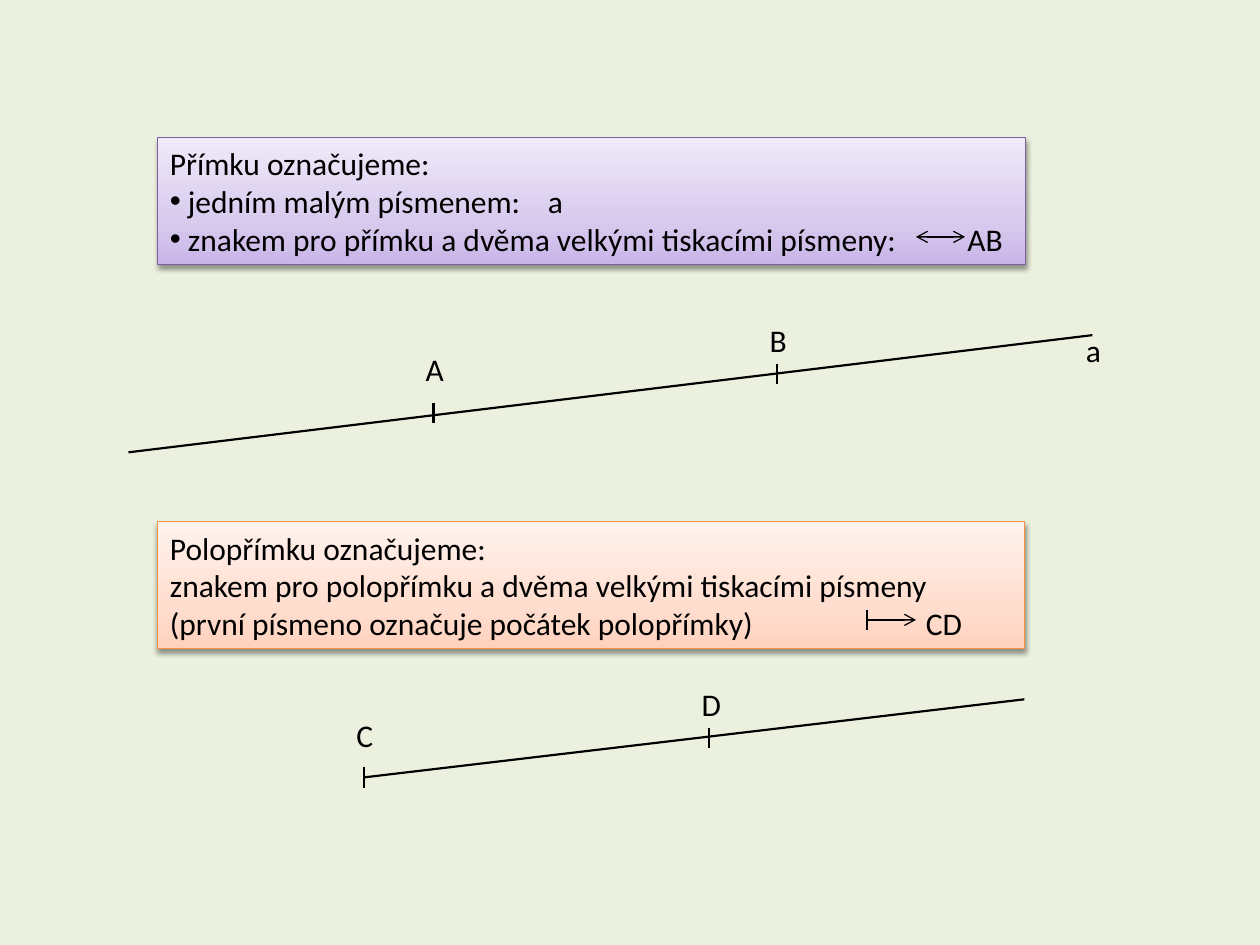
from copy import deepcopy

from pptx import Presentation
from pptx.dml.color import RGBColor
from pptx.enum.shapes import MSO_CONNECTOR, MSO_SHAPE
from pptx.enum.text import MSO_ANCHOR, PP_ALIGN
from pptx.oxml.ns import qn
from pptx.util import Inches, Pt
from lxml import etree

STRAIGHT = MSO_CONNECTOR.STRAIGHT
RECTANGLE = MSO_SHAPE.RECTANGLE
MIDDLE = MSO_ANCHOR.MIDDLE
LEFT = PP_ALIGN.LEFT

BACKGROUND = RGBColor(0xEB, 0xF1, 0xDE)
BLACK = RGBColor(0, 0, 0)
PURPLE_LINE = RGBColor(0x7D, 0x60, 0xA0)
PURPLE_FILL = (RGBColor(0xC9, 0xB5, 0xE8), RGBColor(0xD8, 0xCB, 0xEE), RGBColor(0xF0, 0xEA, 0xF9))
ORANGE_LINE = RGBColor(0xF6, 0x92, 0x40)
ORANGE_FILL = (RGBColor(0xFF, 0xD2, 0xBD), RGBColor(0xFF, 0xDE, 0xD0), RGBColor(0xFF, 0xF2, 0xED))
STOP_POSITIONS = (0, 0.35, 1)

FONT_FORMAT = {"name": "Calibri", "size": Pt(18)}
TICK_HEIGHT = 0.16
LABEL_SIZE = (0.39, 0.4)


def add_xml(parent, tag, **values):
    return etree.SubElement(parent, qn(tag), {key: str(value) for key, value in values.items()})


def write_text(para, text):
    para.alignment = LEFT
    span = para.add_run()
    span.text = text
    for key, value in FONT_FORMAT.items():
        setattr(span.font, key, value)
    span.font.color.rgb = BLACK


def add_line(page, start, end, weight=1.25, arrows=()):
    line = page.shapes.add_connector(STRAIGHT, *map(Inches, start + end))
    line.line.color.rgb = BLACK
    line.line.width = Pt(weight)
    properties = line._element.spPr
    outline = properties.find(qn("a:ln"))
    for arrow in arrows:
        add_xml(outline, arrow, type="arrow")
    add_xml(properties, "a:effectLst")


def add_tick(page, x, y, weight=1.25):
    half = TICK_HEIGHT / 2
    add_line(page, (x, y - half), (x, y + half), weight)


def add_label(page, left, top, text):
    box = page.shapes.add_textbox(*map(Inches, (left, top) + LABEL_SIZE))
    box.text_frame.word_wrap = True
    write_text(box.text_frame.paragraphs[0], text)


def add_shadow(box):
    box.shadow.inherit = False
    effects = box._element.spPr.find(qn("a:effectLst"))
    shadow = add_xml(effects, "a:outerShdw", blurRad=Pt(3.1), dist=Pt(1.6),
                     dir=90 * 60000, rotWithShape=0)
    color = add_xml(shadow, "a:srgbClr", val=BLACK)
    add_xml(color, "a:alpha", val=38000)


def fill_gradient(box, colors):
    box.fill.gradient()
    box.fill.gradient_angle = 90
    stop_list = box._element.spPr.find(qn("a:gradFill")).find(qn("a:gsLst"))
    stop_list.append(deepcopy(stop_list[0]))
    for stop, position, color in zip(box.fill.gradient_stops, STOP_POSITIONS, colors):
        stop.position = position
        stop.color.rgb = color


def add_note(page, area, colors, line_color, rows):
    box = page.shapes.add_shape(RECTANGLE, *map(Inches, area))
    fill_gradient(box, colors)
    box.line.color.rgb = line_color
    box.line.width = Pt(0.75)
    add_shadow(box)
    frame = box.text_frame
    frame.word_wrap = True
    frame.vertical_anchor = MIDDLE
    for index, (text, bullet, tab) in enumerate(rows):
        para = frame.add_paragraph() if index else frame.paragraphs[0]
        write_text(para, text)
        properties = para._p.get_or_add_pPr()
        if bullet:
            add_xml(properties, "a:buFont", typeface="Arial")
            add_xml(properties, "a:buChar", char="•")
        if tab:
            tabs = add_xml(properties, "a:tabLst")
            add_xml(tabs, "a:tab", pos=Inches(tab), algn="l")


def add_marked_line(page, area, points):
    left, top, width, height = area
    add_line(page, (left, top + height), (left + width, top))
    for name, x, y, lift in points:
        add_tick(page, x, y)
        add_label(page, x - 0.16, y - lift, name)


def add_line_section(page):
    add_note(page, (1.25, 1.09, 6.89, 1.01), PURPLE_FILL, PURPLE_LINE, [
        ("Přímku označujeme:", False, None),
        (" jedním malým písmenem:\ta", True, 3),
        (" znakem pro přímku a dvěma velkými tiskacími písmeny:\tAB", True, 6.33)])
    add_line(page, (7.27, 1.88), (7.66, 1.88), 0.75, ("a:headEnd", "a:tailEnd"))
    add_marked_line(page, (1.02, 2.66, 7.65, 0.93),
                    [("A", 3.44, 3.28, 0.55), ("B", 6.17, 2.97, 0.47)])
    add_label(page, 8.52, 2.58, "a")


def add_ray_section(page):
    add_note(page, (1.25, 4.14, 6.88, 1.01), ORANGE_FILL, ORANGE_LINE, [
        ("Polopřímku označujeme:", False, None),
        ("znakem pro polopřímku a dvěma velkými tiskacími písmeny", False, None),
        ("(první písmeno označuje počátek polopřímky)\tCD", False, 6)])
    add_line(page, (6.88, 4.92), (7.27, 4.92), 0.75, ("a:tailEnd",))
    add_tick(page, 6.88, 4.92, 0.75)
    add_marked_line(page, (2.89, 5.55, 5.24, 0.62),
                    [("C", 2.89, 6.17, 0.54), ("D", 5.63, 5.86, 0.47)])


def main():
    deck = Presentation()
    deck.slide_width, deck.slide_height = Inches(10), Inches(7.5)
    page = deck.slides.add_slide(deck.slide_layouts[6])
    page.background.fill.solid()
    page.background.fill.fore_color.rgb = BACKGROUND
    add_line_section(page)
    add_ray_section(page)
    deck.save("out.pptx")


if __name__ == "__main__":
    main()
